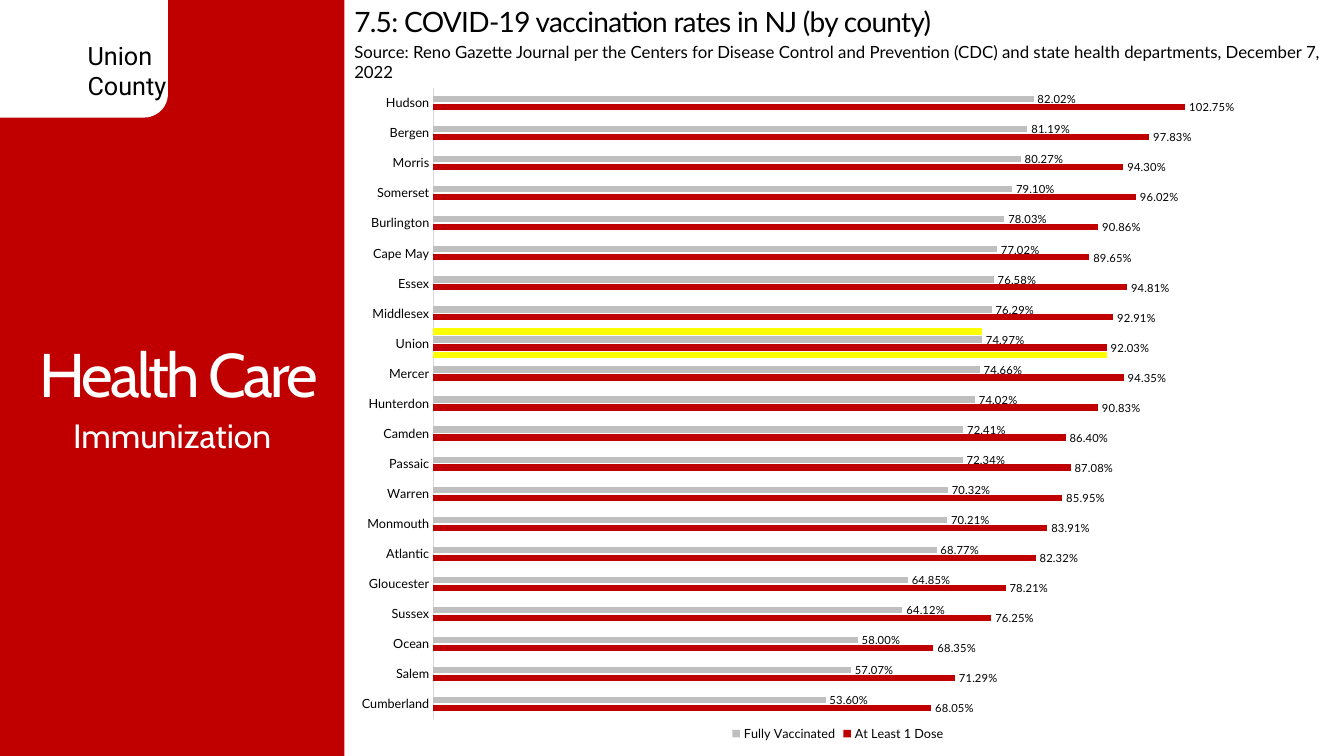
import pptx
import pptx.chart.data
import pptx.dml.color
import pptx.enum.chart
import pptx.enum.shapes
import pptx.enum.text
import pptx.oxml
import pptx.oxml.ns
import pptx.util

Pt = pptx.util.Pt
COLORS = {"red": "C00000", "white": "FFFFFF", "black": "000000",
          "gray": "BFBFBF", "yellow": "FFFF00", "axis": "D9D9D9"}
HIGHLIGHTED = "Union"
RATES = {
    "Cumberland": (68.05, 53.60), "Salem": (71.29, 57.07), "Ocean": (68.35, 58.00),
    "Sussex": (76.25, 64.12), "Gloucester": (78.21, 64.85), "Atlantic": (82.32, 68.77),
    "Monmouth": (83.91, 70.21), "Warren": (85.95, 70.32), "Passaic": (87.08, 72.34),
    "Camden": (86.40, 72.41), "Hunterdon": (90.83, 74.02), "Mercer": (94.35, 74.66),
    "Union": (92.03, 74.97), "Middlesex": (92.91, 76.29), "Essex": (94.81, 76.58),
    "Cape May": (89.65, 77.02), "Burlington": (90.86, 78.03), "Somerset": (96.02, 79.10),
    "Morris": (94.30, 80.27), "Bergen": (97.83, 81.19), "Hudson": (102.75, 82.02),
}


def rgb(name):
    return pptx.dml.color.RGBColor.from_string(COLORS[name])


def style_font(font, size, face, color="black"):
    font.size = Pt(size)
    font.name = face
    font.bold = False
    font.color.rgb = rgb(color)


def place(shape, left, top, width, height):
    shape.left, shape.top = Pt(left), Pt(top)
    shape.width, shape.height = Pt(width), Pt(height)


def write(shape, text, size, face, color="black", align="LEFT", anchor="TOP",
          tracking=0, line_spacing=1.0):
    frame = shape.text_frame
    frame.word_wrap = True
    frame.auto_size = pptx.enum.text.MSO_AUTO_SIZE.NONE
    frame.vertical_anchor = getattr(pptx.enum.text.MSO_ANCHOR, anchor)
    frame.text = text
    for paragraph in frame.paragraphs:
        paragraph.alignment = getattr(pptx.enum.text.PP_ALIGN, align)
        paragraph.line_spacing = line_spacing
        paragraph.space_before = Pt(0)
        for run in paragraph.runs:
            style_font(run.font, size, face, color)
            if tracking:
                run.font._element.set("spc", str(int(tracking * 100)))


def add_panel(slide, kind, color, left, top, width, height):
    panel = slide.shapes.add_shape(kind, Pt(left), Pt(top), Pt(width), Pt(height))
    panel.shadow.inherit = False
    panel.fill.solid()
    panel.fill.fore_color.rgb = rgb(color)
    panel.line.fill.background()
    return panel


def add_sidebar(slide, left, top, width, height):
    kinds = pptx.enum.shapes.MSO_SHAPE
    topic, subtopic = slide.placeholders[0], slide.placeholders[1]
    backdrop = add_panel(slide, kinds.RECTANGLE, "red", left, top, width, height)
    corner = add_panel(slide, kinds.ROUNDED_RECTANGLE, "white",
                       left - 24, top - 18, 144, 102)
    topic._element.addprevious(backdrop._element)
    topic._element.addprevious(corner._element)

    county = slide.shapes.add_textbox(Pt(left + 55.5), Pt(top + 25), Pt(72), Pt(51))
    write(county, "Union\nCounty", 18, "Roboto")
    place(topic, left, top + 54, width + 9.5, height - 108)
    write(topic, "Health Care", 44, "Cabin", "white", "CENTER", "MIDDLE", -2, 0.9)
    place(subtopic, left, top + 292.5, width, 36)
    write(subtopic, "Immunization", 24, "Cabin", "white", "CENTER")


def add_heading(slide, left, top, width):
    heading = slide.shapes.add_textbox(Pt(left), Pt(top), Pt(width), Pt(31.5))
    write(heading, "7.5: COVID-19 vaccination rates in NJ (by county)", 20, "Lato",
          tracking=-0.5)
    source = slide.shapes.add_textbox(Pt(left), Pt(top + 26), Pt(width), Pt(36))
    write(source, "Source: Reno Gazette Journal per the Centers for Disease Control and "
          "Prevention (CDC) and state health departments, December 7, 2022", 12, "Lato")


def set_plot_area(chart, x, y, width, height):
    plot_area = chart._chartSpace.chart.plotArea
    for layout in plot_area.findall(pptx.oxml.ns.qn("c:layout")):
        plot_area.remove(layout)
    plot_area.insert(0, pptx.oxml.parse_xml(
        f'<c:layout {pptx.oxml.ns.nsdecls("c")}><c:manualLayout>'
        '<c:layoutTarget val="inner"/><c:xMode val="edge"/><c:yMode val="edge"/>'
        f'<c:x val="{x}"/><c:y val="{y}"/><c:w val="{width}"/><c:h val="{height}"/>'
        '</c:manualLayout></c:layout>'))


def add_legend(chart, hidden_entries):
    chart.has_legend = True
    legend = chart.legend
    legend.position = pptx.enum.chart.XL_LEGEND_POSITION.BOTTOM
    legend.include_in_layout = False
    style_font(legend.font, 9, "Lato")
    for position, index in enumerate(hidden_entries, start=1):
        legend._element.insert(position, pptx.oxml.parse_xml(
            f'<c:legendEntry {pptx.oxml.ns.nsdecls("c")}>'
            f'<c:idx val="{index}"/><c:delete val="1"/></c:legendEntry>'))


def add_rates_chart(slide, left, top, width, height):
    data = pptx.chart.data.CategoryChartData()
    data.categories = list(RATES)
    one_dose, full = ([round(rate / 100, 4) for rate in rates]
                      for rates in zip(*RATES.values()))

    def highlight(value):
        return [value if county == HIGHLIGHTED else None for county in RATES]

    series_styles = [
        ("Series 1", highlight(0.92), "yellow"), ("At Least 1 Dose", one_dose, "red"),
        ("Fully Vaccinated", full, "gray"), ("Series 4", highlight(0.75), "yellow"),
    ]
    for name, values, _ in series_styles:
        data.add_series(name, values)
    chart = slide.shapes.add_chart(
        pptx.enum.chart.XL_CHART_TYPE.BAR_CLUSTERED,
        Pt(left), Pt(top), Pt(width), Pt(height), data).chart
    chart.has_title = False
    style_font(chart.font, 10, "Calibri")

    plot = chart.plots[0]
    plot.vary_by_categories = False
    plot.gap_width = 0
    plot.overlap = -26
    for series, (name, values, color) in zip(plot.series, series_styles):
        series.format.fill.solid()
        series.format.fill.fore_color.rgb = rgb(color)
        if color != "yellow":
            labels = series.data_labels
            labels.show_value = True
            labels.number_format = "0.00%"
            labels.number_format_is_linked = False
            labels.position = pptx.enum.chart.XL_LABEL_POSITION.OUTSIDE_END
            style_font(labels.font, 8, "Lato")

    counties, rates = chart.category_axis, chart.value_axis
    counties.major_tick_mark = pptx.enum.chart.XL_TICK_MARK.NONE
    counties.format.line.color.rgb = rgb("axis")
    counties.format.line.width = Pt(0.75)
    style_font(counties.tick_labels.font, 9, "Lato")
    rates.minimum_scale, rates.maximum_scale = 0, 1.2
    rates.has_major_gridlines = False
    rates.visible = False
    set_plot_area(chart, 0.09, 0, 0.89, 0.96)
    add_legend(chart, [0, 3])


def main():
    deck = pptx.Presentation()
    deck.slide_width, deck.slide_height = Pt(960), Pt(540)
    slide = deck.slides.add_slide(deck.slide_layouts[0])
    add_sidebar(slide, 0, 0, 246, 540)
    add_heading(slide, 246, 0, 714)
    add_rates_chart(slide, 246, 62.5, 705, 470)
    deck.save("out.pptx")


if __name__ == "__main__":
    main()
